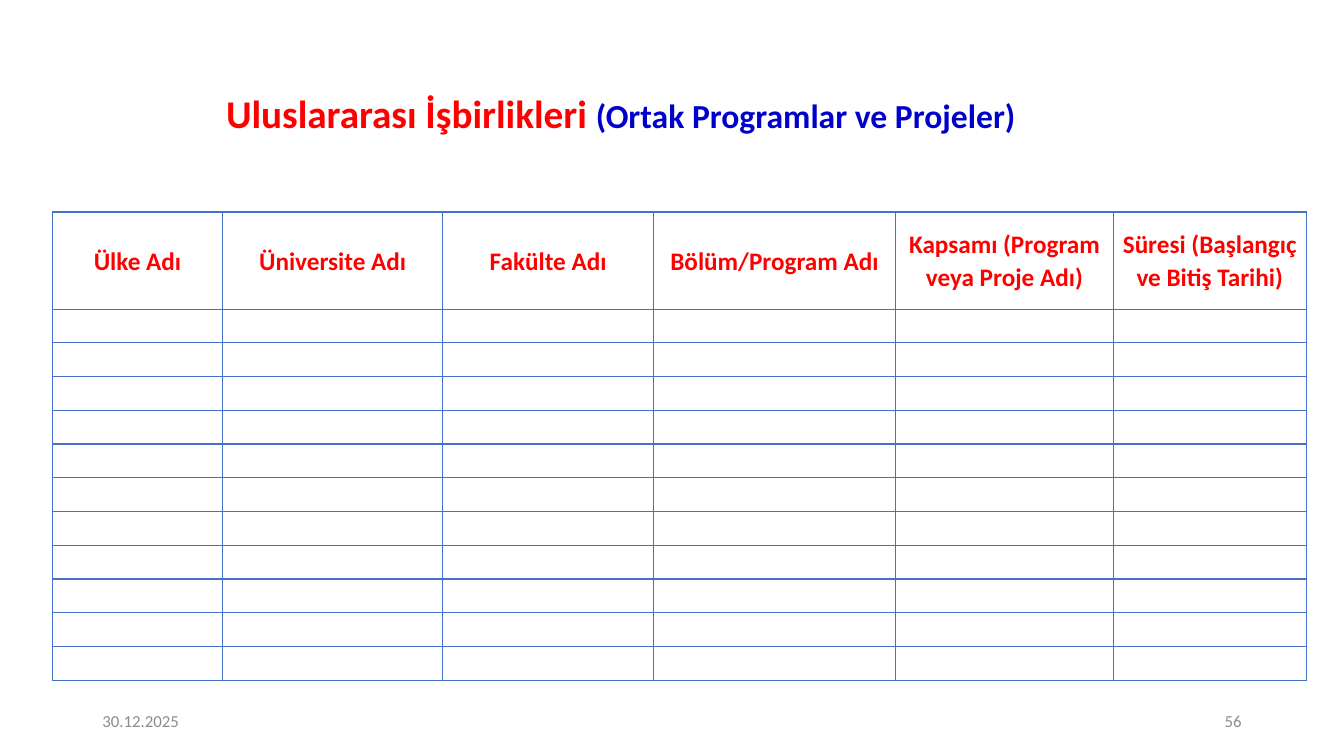
import pptx
import pptx.util
import pptx.dml.color
import pptx.enum.text
import pptx.oxml
import pptx.oxml.ns

Cm, Pt = pptx.util.Cm, pptx.util.Pt
RGBColor = pptx.dml.color.RGBColor
PP_ALIGN = pptx.enum.text.PP_ALIGN
MSO_ANCHOR = pptx.enum.text.MSO_ANCHOR

RED = RGBColor(0xFF, 0x00, 0x00)
BLUE = RGBColor(0x00, 0x00, 0xCC)
GREY = RGBColor(0x8C, 0x8C, 0x8C)
BORDER = RGBColor(0x44, 0x72, 0xC4)


def style(r, size, color, bold=False):
    r.font.name = "Calibri"
    r.font.size = Pt(size)
    r.font.bold = bold
    r.font.color.rgb = color


def add_borders(cell):
    tcPr = cell._tc.get_or_add_tcPr()
    for i, side in enumerate(("lnL", "lnR", "lnT", "lnB")):
        tcPr.insert(i, pptx.oxml.parse_xml(
            f'<a:{side} {pptx.oxml.ns.nsdecls("a")} w="{Pt(1)}"><a:solidFill>'
            f'<a:srgbClr val="{BORDER}"/></a:solidFill></a:{side}>'))


prs = pptx.Presentation()
prs.slide_width, prs.slide_height = Cm(33.87), Cm(19.05)
s = prs.slides.add_slide(prs.slide_layouts[5])

# Title in two colours
title = s.shapes.title
title.left, title.top, title.width, title.height = Cm(1.32), Cm(2.13), Cm(28.65), Cm(1.6)
tf = title.text_frame
tf.vertical_anchor = MSO_ANCHOR.MIDDLE
p = tf.paragraphs[0]
p.alignment = PP_ALIGN.CENTER
p.line_spacing = 0.9
for text, size, color in (("Uluslararası İşbirlikleri ", 28, RED),
                          ("(Ortak Programlar ve Projeler)", 24, BLUE)):
    r = p.add_run()
    r.text = text
    style(r, size, color, True)

# Table: header row and empty rows to fill in
columns = [("Ülke Adı", 4.29), ("Üniversite Adı", 5.55), ("Fakülte Adı", 5.31),
           ("Bölüm/Program Adı", 6.1), ("Kapsamı (Program veya Proje Adı)", 5.49),
           ("Süresi (Başlangıç ve Bitiş Tarihi)", 4.86)]
EMPTY_ROWS = 11
HEADER_H, ROW_H = 2.45, 0.85
table = s.shapes.add_table(EMPTY_ROWS + 1, len(columns), Cm(1.32), Cm(5.34), Cm(31.6),
                           Cm(HEADER_H + EMPTY_ROWS * ROW_H)).table
table.horz_banding = False
for i, row in enumerate(table.rows):
    row.height = Cm(ROW_H if i else HEADER_H)
for cell in table.iter_cells():
    cell.margin_left = cell.margin_right = cell.margin_top = cell.margin_bottom = 0
    cell.vertical_anchor = MSO_ANCHOR.MIDDLE
    cell.fill.background()
    add_borders(cell)
for j, (name, width) in enumerate(columns):
    table.columns[j].width = Cm(width)
    cell = table.cell(0, j)
    cell.text_frame.text = name
    p = cell.text_frame.paragraphs[0]
    p.alignment = PP_ALIGN.CENTER
    p.line_spacing = 1.07
    style(p.runs[0], 18, RED, True)

# Date and page number
for text, left, align in (("30.12.2025", 2.33, PP_ALIGN.LEFT), ("56", 23.92, PP_ALIGN.RIGHT)):
    tf = s.shapes.add_textbox(Cm(left), Cm(17.66), Cm(7.62), Cm(1.01)).text_frame
    tf.word_wrap = True
    tf.vertical_anchor = MSO_ANCHOR.MIDDLE
    tf.text = text
    p = tf.paragraphs[0]
    p.alignment = align
    style(p.runs[0], 12, GREY)

prs.save("out.pptx")
